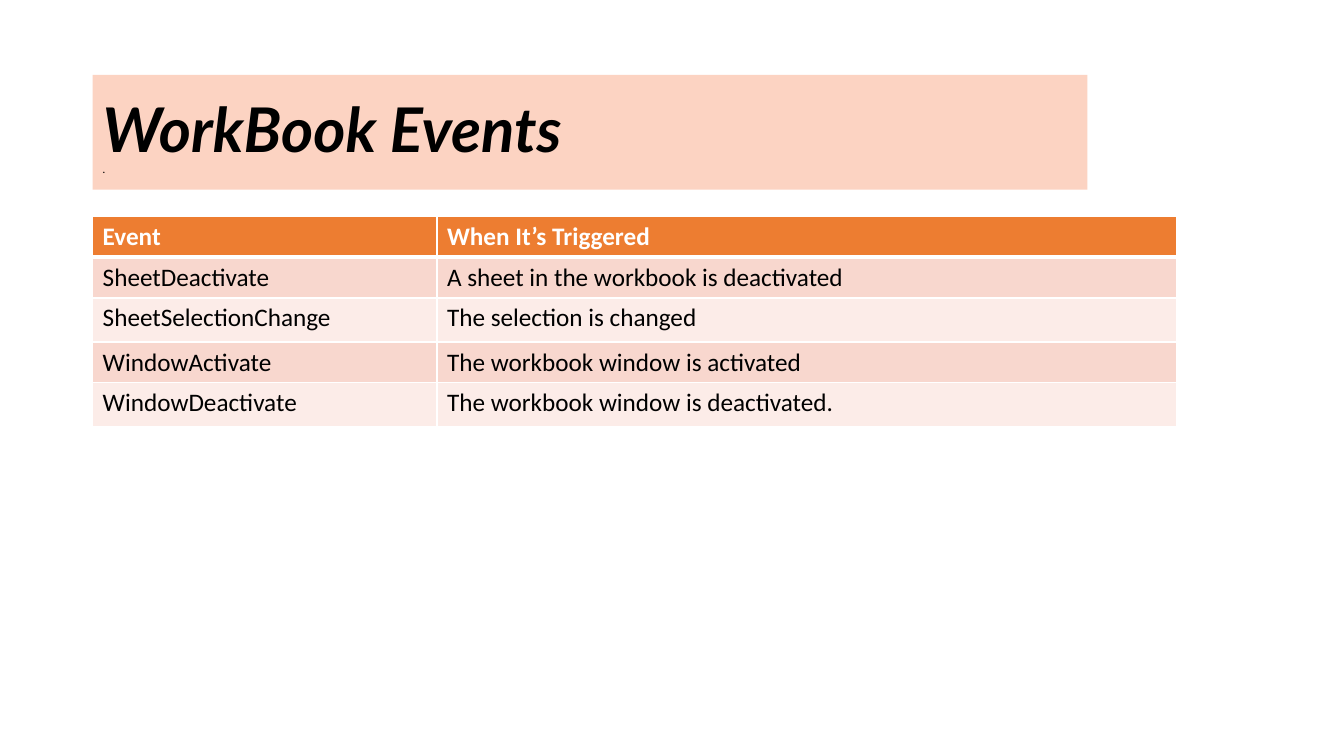
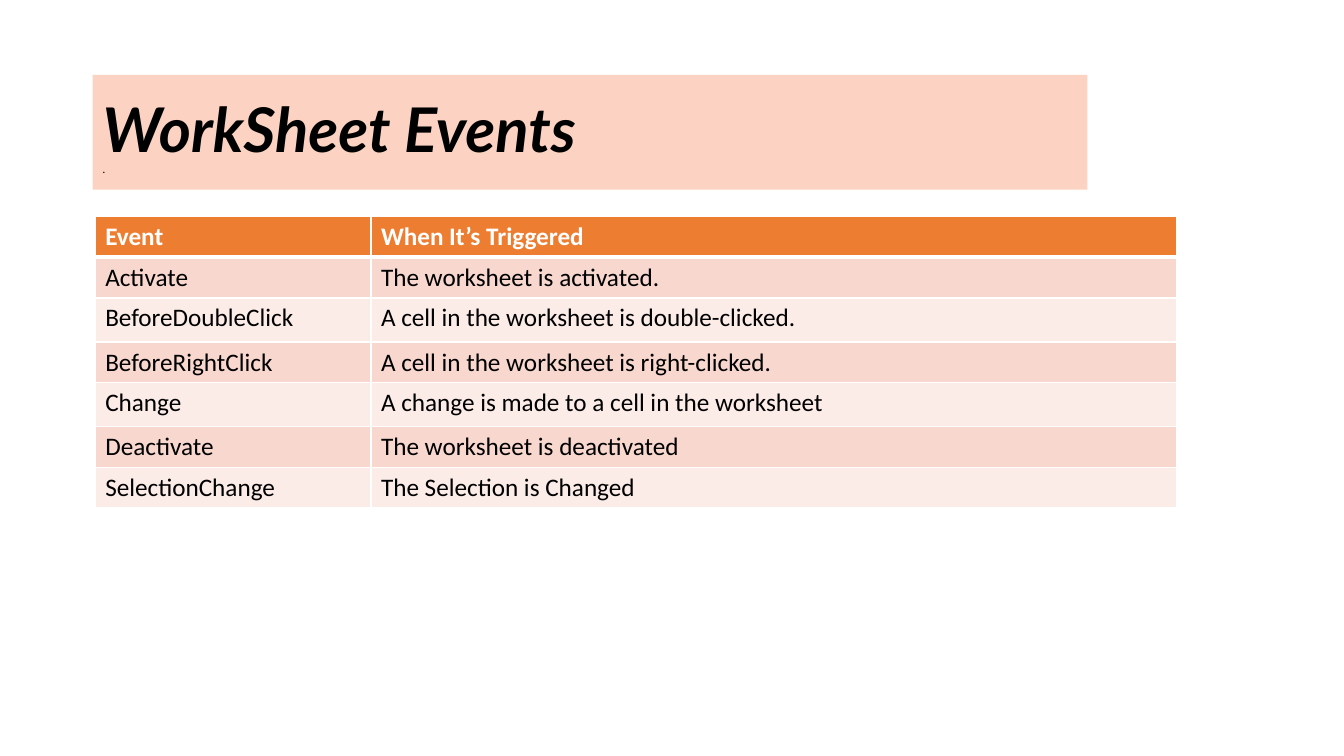
from lxml import etree
from pptx import Presentation
from pptx.dml.color import RGBColor
from pptx.enum.shapes import MSO_SHAPE
from pptx.enum.text import MSO_ANCHOR, PP_ALIGN
from pptx.oxml.ns import qn
from pptx.util import Pt

RECT = MSO_SHAPE.RECTANGLE
MIDDLE = MSO_ANCHOR.MIDDLE
LEFT = PP_ALIGN.LEFT

# Shared look
BLACK, WHITE = "000000", "FFFFFF"
BAND, HEAD = "FCD3C2", "ED7D31"
STRIPES = ("F8D7CE", "FCECE8")
HEADING, BODY = "Lato", "Calibri"
EDGE = 66.2
TOP = 154.8
LOW, TALL = 29, 31.5

# Content
LABELS = ("Event", "When It’s Triggered")
BOOK = (
    ("SheetDeactivate", "A sheet in the workbook is deactivated"),
    ("SheetSelectionChange", "The selection is changed"),
    ("WindowActivate", "The workbook window is activated"),
    ("WindowDeactivate", "The workbook window is deactivated."),
)
SHEET = (
    ("Activate", "The worksheet is activated."),
    ("BeforeDoubleClick", "A cell in the worksheet is double-clicked."),
    ("BeforeRightClick", "A cell in the worksheet is right-clicked."),
    ("Change", "A change is made to a cell in the worksheet"),
    ("Deactivate", "The worksheet is deactivated"),
    ("SelectionChange", "The Selection is Changed"),
)


def color(code):
    return RGBColor.from_string(code)


def paint(item, code):
    item.fill.solid()
    item.fill.fore_color.rgb = color(code)


def write(frame, text, face, size, code=BLACK, bold=False, italic=False):
    para = frame.paragraphs[0]
    para.text = text
    para.alignment = LEFT
    font = para.font
    font.name, font.size = face, Pt(size)
    font.bold, font.italic = bold, italic
    font.color.rgb = color(code)
    return para


def add_title(slide, text):
    band = slide.shapes.add_shape(RECT, Pt(EDGE), Pt(53.5), Pt(710.5), Pt(82))
    band.shadow.inherit = False
    band.line.fill.background()
    paint(band, BAND)
    frame = band.text_frame
    frame.word_wrap = True
    frame.vertical_anchor = MIDDLE
    para = write(frame, text, HEADING, 44, bold=True, italic=True)
    para.line_spacing = 0.9


def add_dot(slide):
    box = slide.shapes.add_textbox(Pt(EDGE), Pt(112.3), Pt(710.5), Pt(20))
    box.text_frame.word_wrap = True
    write(box.text_frame, ".", HEADING, 8)


def add_edges(cell, top, bottom):
    props = cell._tc.get_or_add_tcPr()
    for side, width in (("L", 1), ("R", 1), ("T", top), ("B", bottom)):
        line = etree.SubElement(props, qn(f"a:ln{side}"), w=str(Pt(width)))
        solid = etree.SubElement(line, qn("a:solidFill"))
        etree.SubElement(solid, qn("a:srgbClr"), val=WHITE)


def add_grid(slide, left, widths, events):
    rows = (LABELS, *events)
    # The third and fifth rows are slightly taller
    heights = [TALL if r in (2, 4) else LOW for r in range(len(rows))]
    frame = slide.shapes.add_table(len(rows), len(widths), Pt(left), Pt(TOP),
                                   Pt(sum(widths)), Pt(sum(heights)))
    table = frame.table
    table.horz_banding = False
    for col, width in zip(table.columns, widths):
        col.width = Pt(width)
    for r, (texts, height) in enumerate(zip(rows, heights)):
        table.rows[r].height = Pt(height)
        head = r == 0
        for c, text in enumerate(texts):
            cell = table.cell(r, c)
            # A thick rule parts the header from the events
            add_edges(cell, 3 if r == 1 else 1, 3 if head else 1)
            paint(cell, HEAD if head else STRIPES[(r - 1) % 2])
            write(cell.text_frame, text, BODY, 18,
                  WHITE if head else BLACK, bold=head)


def add_page(deck, title, left, widths, events):
    slide = deck.slides.add_slide(deck.slide_layouts[6])
    add_title(slide, title)
    add_dot(slide)
    add_grid(slide, left, widths, events)


def main():
    deck = Presentation()
    deck.slide_width, deck.slide_height = Pt(960), Pt(540)
    add_page(deck, "WorkBook Events", EDGE, (246, 528.5), BOOK)
    add_page(deck, "WorkSheet Events", 68, (197, 575.5), SHEET)
    deck.save("out.pptx")


if __name__ == "__main__":
    main()
